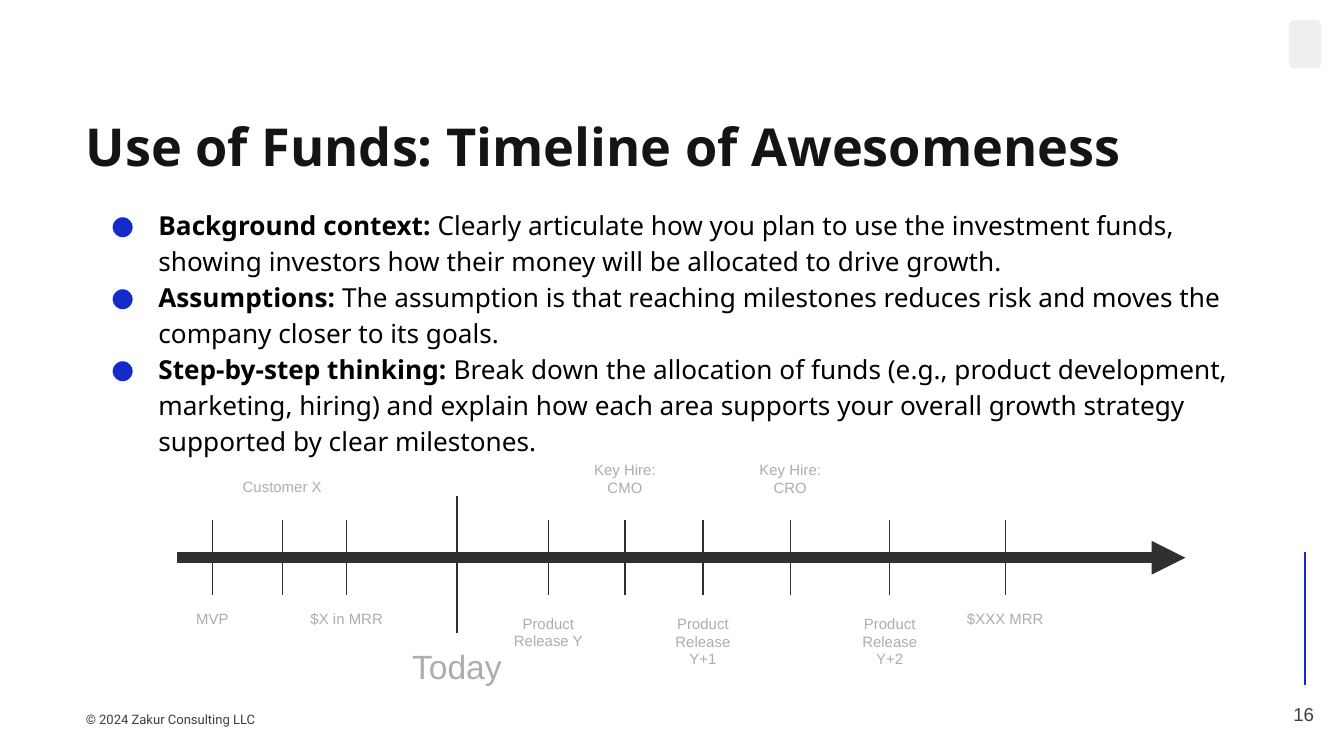
from lxml import etree
from pptx import Presentation
from pptx import util as u
from pptx.dml.color import RGBColor
from pptx.enum import shapes, text
from pptx.oxml.ns import qn

BLACK = RGBColor(0x00, 0x00, 0x00)
INK = RGBColor(0x15, 0x13, 0x14)
DARK = RGBColor(0x30, 0x30, 0x30)
FOOTER = RGBColor(0x3F, 0x3F, 0x3F)
LABEL = RGBColor(0xAD, 0xAD, 0xAD)
PALE = RGBColor(0xEF, 0xEF, 0xEF)
BLUE = RGBColor(0x13, 0x2B, 0xCA)

AXIS_Y = 4.15
TICK_HALF = 0.28
TODAY_X = 3.4

# tick x, label, label top, label width, label height
MILESTONES = [
    (1.58, "MVP", 4.47, 0.59, 0.34),
    (2.1, "Customer X", 3.49, 0.79, 0.34),
    (2.58, "$X in MRR", 4.47, 0.79, 0.34),
    (4.08, "Product Release Y", 4.47, 0.79, 0.47),
    (4.65, "Key Hire: CMO", 3.33, 0.79, 0.47),
    (5.23, "Product Release Y+1", 4.47, 0.79, 0.61),
    (5.88, "Key Hire: CRO", 3.33, 0.79, 0.47),
    (6.62, "Product Release Y+2", 4.47, 0.79, 0.61),
    (7.48, "$XXX MRR", 4.47, 0.79, 0.34),
]

POINTS = [
    ("Background context:",
     " Clearly articulate how you plan to use the investment funds, showing "
     "investors how their money will be allocated to drive growth."),
    ("Assumptions:",
     " The assumption is that reaching milestones reduces risk and moves the "
     "company closer to its goals."),
    ("Step-by-step thinking:",
     " Break down the allocation of funds (e.g., product development, "
     "marketing, hiring) and explain how each area supports your overall "
     "growth strategy supported by clear milestones."),
]


def add_run(p, words, size=8, font="Arial", color=LABEL, bold=False):
    r = p.add_run()
    r.text = words
    r.font.size = u.Pt(size)
    r.font.name = font
    r.font.color.rgb = color
    r.font.bold = bold


def add_bullet(p, color, size, font):
    """Give the paragraph a hanging round bullet."""
    pPr = p._p.get_or_add_pPr()
    pPr.set("marL", str(u.Inches(0.5)))
    pPr.set("indent", str(u.Inches(-0.35)))
    fill = etree.SubElement(pPr, qn("a:buClr"))
    etree.SubElement(fill, qn("a:srgbClr"), val=str(color))
    etree.SubElement(pPr, qn("a:buSzPts"), val=str(size * 100))
    etree.SubElement(pPr, qn("a:buFont"), typeface=font)
    etree.SubElement(pPr, qn("a:buChar"), char="●")


class Canvas:
    def __init__(self, s, line_color=DARK, line_width=0.75):
        self.s = s
        self.line_color = line_color
        self.line_width = line_width

    def frame(self, x, y, w, h, anchor=text.MSO_ANCHOR.TOP, grow=False):
        """Add an empty text box and return its text frame."""
        sp = self.s.shapes.add_textbox(*map(u.Inches, (x, y, w, h)))
        tf = sp.text_frame
        tf.word_wrap = True
        tf.vertical_anchor = anchor
        tf.auto_size = (text.MSO_AUTO_SIZE.SHAPE_TO_FIT_TEXT if grow
                        else text.MSO_AUTO_SIZE.NONE)
        tf.margin_left = tf.margin_right = u.Inches(0.1)
        tf.margin_top = tf.margin_bottom = u.Inches(0.1)
        return tf

    def text(self, words, box, align=text.PP_ALIGN.LEFT, spacing=1.0,
             anchor=text.MSO_ANCHOR.TOP, grow=False, **style):
        p = self.frame(*box, anchor=anchor, grow=grow).paragraphs[0]
        p.alignment = align
        p.line_spacing = spacing
        add_run(p, words, **style)

    def label(self, words, x, y, w, h, size=8):
        """Add a label centred on x."""
        self.text(words, (x - w / 2, y, w, h), align=text.PP_ALIGN.CENTER,
                  grow=True, size=size)

    def bullets(self, points, box, size, font, color):
        tf = self.frame(*box)
        for i, (lead, rest) in enumerate(points):
            p = tf.add_paragraph() if i else tf.paragraphs[0]
            add_bullet(p, BLUE, size, font)
            p.line_spacing = 1.15
            add_run(p, lead, size, font, color, bold=True)
            add_run(p, rest, size, font, color)

    def line(self, x1, y1, x2, y2, color=None, width=None, arrow=False):
        c = self.s.shapes.add_connector(
            shapes.MSO_CONNECTOR.STRAIGHT, *map(u.Inches, (x1, y1, x2, y2)))
        c.line.color.rgb = color or self.line_color
        c.line.width = u.Pt(width or self.line_width)
        if arrow:
            etree.SubElement(c.line._get_or_add_ln(), qn("a:tailEnd"),
                             type="triangle")
        etree.SubElement(c._element.spPr, qn("a:effectLst"))

    def block(self, x, y, w, h, color):
        sp = self.s.shapes.add_shape(shapes.MSO_SHAPE.ROUNDED_RECTANGLE,
                                     *map(u.Inches, (x, y, w, h)))
        sp.shadow.inherit = False
        sp.fill.solid()
        sp.fill.fore_color.rgb = color
        sp.line.fill.background()


def main():
    prs = Presentation()
    prs.slide_width = u.Inches(10)
    prs.slide_height = u.Inches(10 * 9 / 16)
    canvas = Canvas(prs.slides.add_slide(prs.slide_layouts[6]))

    canvas.block(9.59, 0.15, 0.24, 0.36, PALE)
    canvas.line(9.71, 5.1, 9.71, 4.11, color=BLUE)
    canvas.text("© 2024 Zakur Consulting LLC", (0.54, 5.21, 2.14, 0.32),
                spacing=1.15, grow=True, size=7, font="Roboto", color=FOOTER)
    canvas.text("16", (9.43, 5.1, 0.54, 0.43), align=text.PP_ALIGN.CENTER,
                anchor=text.MSO_ANCHOR.MIDDLE, size=10, color=FOOTER)

    canvas.text("Use of Funds: Timeline of Awesomeness",
                (0.54, 0.75, 8.72, 1.08),
                size=28, font="Noto Sans", color=INK, bold=True)
    canvas.bullets(POINTS, (0.58, 1.42, 8.72, 2.06),
                   size=14, font="Noto Sans", color=BLACK)

    canvas.line(1.32, AXIS_Y, 8.82, AXIS_Y, width=6, arrow=True)
    canvas.line(TODAY_X, 3.69, TODAY_X, 4.71)
    canvas.label("Today", TODAY_X, 4.71, 1.07, 0.5, size=18)
    for x, name, top, width, height in MILESTONES:
        canvas.line(x, AXIS_Y - TICK_HALF, x, AXIS_Y + TICK_HALF)
        canvas.label(name, x, top, width, height)

    prs.save("out.pptx")


if __name__ == "__main__":
    main()
